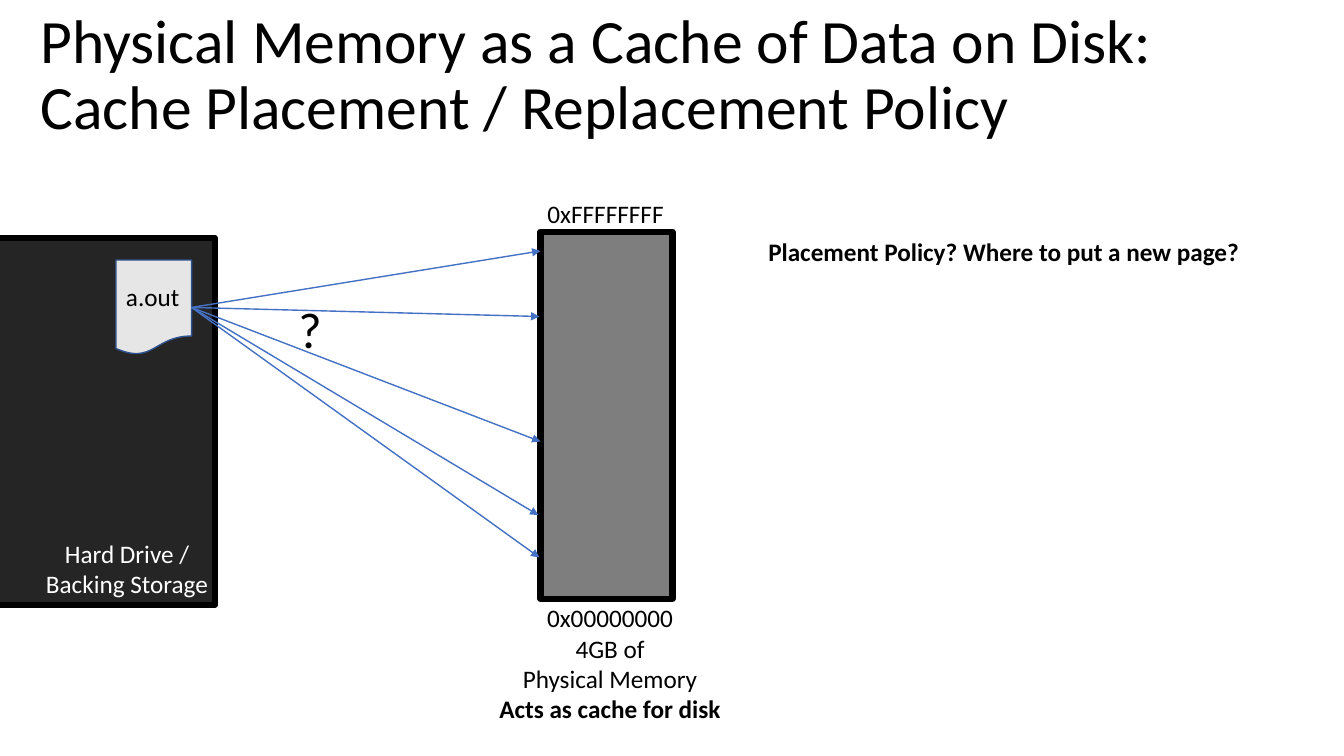
from dataclasses import dataclass

from lxml import etree
from pptx import Presentation
from pptx.dml.color import RGBColor
from pptx.enum.shapes import MSO_CONNECTOR, MSO_SHAPE
from pptx.enum.text import MSO_ANCHOR, MSO_AUTO_SIZE, PP_ALIGN
from pptx.oxml.ns import qn
from pptx.util import Pt

PX = 9144  # EMU per px, 100 px to the inch
FONT = "Calibri"

BLACK = RGBColor(0x00, 0x00, 0x00)
WHITE = RGBColor(0xFF, 0xFF, 0xFF)
MEMORY_GREY = RGBColor(0x7E, 0x7E, 0x7E)
DRIVE_GREY = RGBColor(0x25, 0x25, 0x25)
FILE_GREY = RGBColor(0xE7, 0xE6, 0xE6)
FILE_EDGE = RGBColor(0x2E, 0x52, 0x8F)
ARROW_BLUE = RGBColor(0x44, 0x71, 0xC4)

LEFT, CENTER = PP_ALIGN.LEFT, PP_ALIGN.CENTER
TOP = MSO_ANCHOR.TOP
NO_AUTOSIZE = MSO_AUTO_SIZE.NONE
RECTANGLE, DOCUMENT = MSO_SHAPE.RECTANGLE, MSO_SHAPE.FLOWCHART_DOCUMENT
STRAIGHT = MSO_CONNECTOR.STRAIGHT


@dataclass
class Line:
    text: str
    spacing: float | None = None  # exact line height in points
    bold: bool = False


@dataclass
class Label:
    left: int
    top: int
    width: int
    height: int
    lines: list[Line]
    size: int = 18
    color: RGBColor = BLACK
    align: PP_ALIGN = LEFT


TITLE = Label(
    40, 9, 1188, 132,
    [Line("Physical Memory as a Cache of Data on Disk: "
          "Cache Placement / Replacement Policy", 47.5)],
    size=44,
)
LABELS = [
    Label(125, 279, 60, 32, [Line("a.out")]),
    Label(296, 296, 30, 62, [Line("?")], size=36),
    Label(44, 539, 164, 58,
          [Line("Hard Drive /", 18.1), Line("Backing Storage")],
          color=WHITE, align=CENTER),
    Label(494, 603, 222, 118,
          [Line("0x00000000", 18), Line("4GB of", 21.5),
           Line("Physical Memory"), Line("Acts as cache for disk", bold=True)],
          align=CENTER),
    Label(543, 197, 140, 31, [Line("0xFFFFFFFF")]),
    Label(762, 234, 490, 31,
          [Line("Placement Policy? Where to put a new page?", bold=True)]),
]

FILE_EXIT = (190, 305)
ARROW_TARGETS = [(536, 249), (535, 314), (536, 438), (534, 511), (535, 553)]


def style(s, fill: RGBColor, line: RGBColor, width: float) -> None:
    s.shadow.inherit = False
    s.fill.solid()
    s.fill.fore_color.rgb = fill
    s.line.color.rgb = line
    s.line.width = Pt(width)


def place_text(sp, label: Label) -> None:
    sp.left, sp.top = label.left * PX, label.top * PX
    sp.width, sp.height = label.width * PX, label.height * PX
    tf = sp.text_frame
    tf.word_wrap = True
    tf.auto_size = NO_AUTOSIZE
    tf.vertical_anchor = TOP
    tf.margin_left = tf.margin_top = tf.margin_right = tf.margin_bottom = 0
    tf.text = "\n".join(line.text for line in label.lines)
    for p, line in zip(tf.paragraphs, label.lines):
        p.alignment = label.align
        if line.spacing:
            p.line_spacing = Pt(line.spacing)
        font = p.runs[0].font
        font.name = FONT
        font.size = Pt(label.size)
        font.bold = line.bold
        font.color.rgb = label.color


def add_arrow(slide, start: tuple[int, int], end: tuple[int, int]) -> None:
    c = slide.shapes.add_connector(STRAIGHT, *(v * PX for v in start + end))
    c.line.color.rgb = ARROW_BLUE
    c.line.width = Pt(1)
    etree.SubElement(c.line._get_or_add_ln(), qn("a:tailEnd"), type="triangle")
    etree.SubElement(c._element.spPr, qn("a:effectLst"))


def add_box(slide, preset: MSO_SHAPE, left: int, top: int, width: int, height: int):
    return slide.shapes.add_shape(
        preset, left * PX, top * PX, width * PX, height * PX)


def main() -> None:
    prs = Presentation()
    prs.slide_width, prs.slide_height = 1333 * PX, 750 * PX
    slide = prs.slides.add_slide(prs.slide_layouts[5])
    place_text(slide.shapes.title, TITLE)

    # Physical memory
    memory = add_box(slide, RECTANGLE, 536, 230, 131, 364)
    style(memory, MEMORY_GREY, BLACK, 4.5)

    # Hard drive, open at the slide's left edge
    outline = slide.shapes.build_freeform(0, 600, scale=PX)
    outline.add_line_segments([(213, 600), (213, 236), (0, 236)], close=False)
    style(outline.convert_to_shape(), DRIVE_GREY, BLACK, 4.5)

    # Program file on the drive
    style(add_box(slide, DOCUMENT, 115, 258, 75, 94), FILE_GREY, FILE_EDGE, 1)

    # Candidate places in memory
    for target in ARROW_TARGETS:
        add_arrow(slide, FILE_EXIT, target)

    # Labels
    for label in LABELS:
        place_text(slide.shapes.add_textbox(0, 0, 0, 0), label)

    prs.save("out.pptx")


if __name__ == "__main__":
    main()
